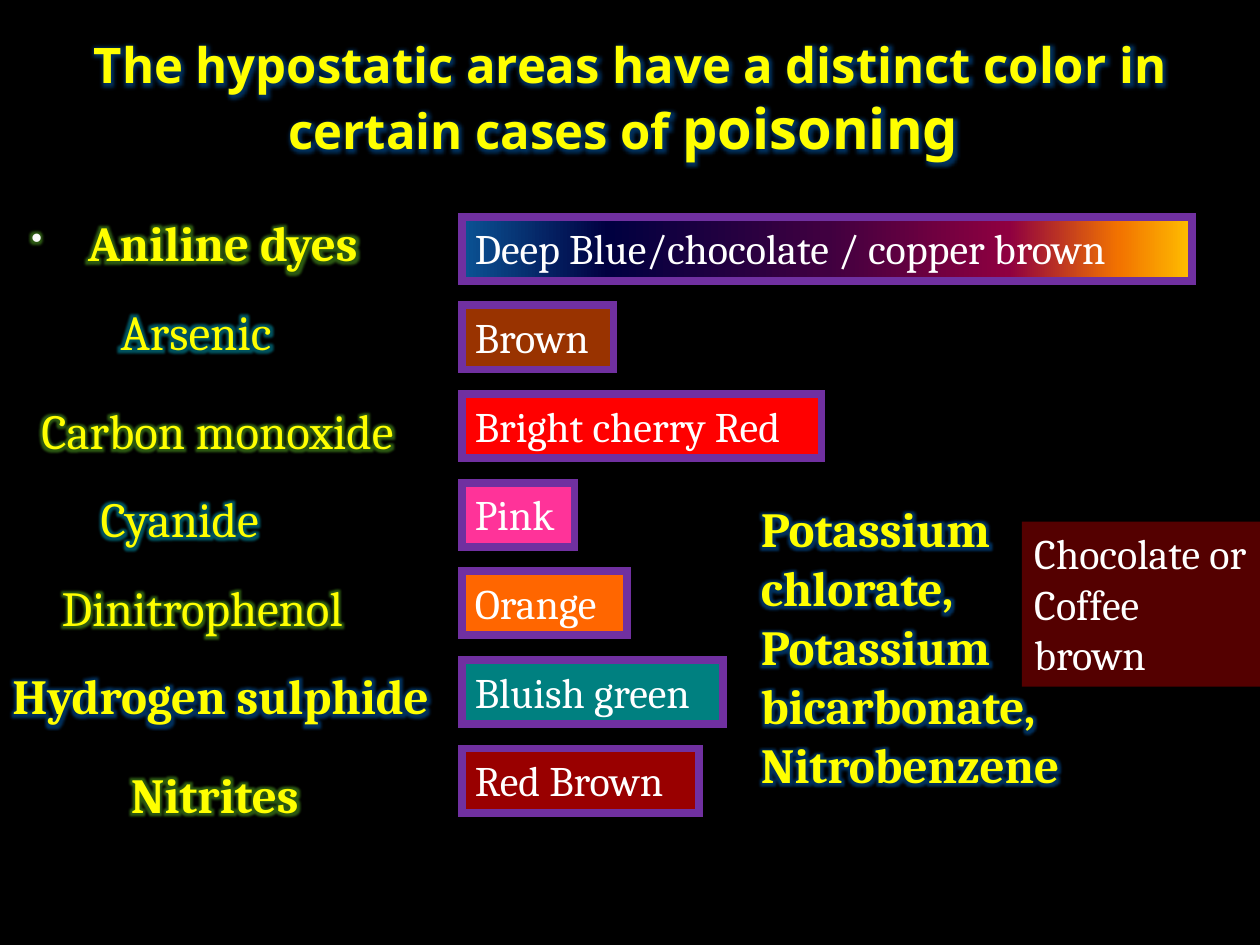
from dataclasses import dataclass

from lxml import etree
from pptx import Presentation
from pptx.dml.color import RGBColor
from pptx.enum.shapes import MSO_SHAPE
from pptx.enum.text import MSO_ANCHOR, MSO_AUTO_SIZE, PP_ALIGN
from pptx.oxml.ns import qn
from pptx.util import Emu, Inches, Pt

RECTANGLE = MSO_SHAPE.RECTANGLE
MIDDLE, TOP = MSO_ANCHOR.MIDDLE, MSO_ANCHOR.TOP
GROW = MSO_AUTO_SIZE.SHAPE_TO_FIT_TEXT
CENTER, LEFT = PP_ALIGN.CENTER, PP_ALIGN.LEFT


@dataclass(frozen=True)
class Theme:
    background: str = "000000"
    poison: str = "FFFF00"
    color_name: str = "FFFFFF"
    border: str = "7030A0"
    bullet: str = "F9F9F9"
    coffee: str = "540000"
    green_glow: str = "70E030"
    teal_glow: str = "00D0F0"
    blue_glow: str = "0078E8"
    heading_font: str = "Noto Sans"
    body_font: str = "Cambria"
    emphasis_size: int = 32
    poison_size: int = 28
    color_size: int = 24
    border_width: float = 4.5
    glow_radius: int = 8


THEME = Theme()
DYE_GRADIENT = [(0, "0B5394"), (20, "000040"), (50, "400040"),
                (75, "8F0040"), (90, "F27300"), (100, "FFBF00")]

# Rows of the color column
COLOR_LEFT, FIRST_ROW, LAST_ROW = 3.67, 1.72, 5.94
LABEL_HEIGHT, COLOR_HEIGHT = 0.57, 0.51

# poison, left, width, shift from the row, bold, glow, color name, color width, fill
ROWS = [
    ("Aniline dyes", 0, 3.11, -0.08, True, THEME.green_glow,
     "Deep Blue/chocolate / copper brown", 5.79, DYE_GRADIENT),
    ("Arsenic", 0.86, 1.53, -0.08, False, THEME.teal_glow, "Brown", 1.2, "993300"),
    ("Carbon monoxide", 0.23, 3.34, 0, False, THEME.green_glow,
     "Bright cherry Red", 2.85, "FF0000"),
    ("Cyanide", 0.7, 1.67, 0, False, THEME.teal_glow, "Pink", 0.89, "FF3399"),
    ("Dinitrophenol", 0.39, 2.67, 0, False, THEME.green_glow, "Orange", 1.31, "FF6600"),
    ("Hydrogen sulphide", 0, 3.77, 0, True, THEME.blue_glow,
     "Bluish green", 2.07, "008080"),
    ("Nitrites", 0.94, 1.58, 0.08, True, THEME.green_glow, "Red Brown", 1.88, "990000"),
]


def rgb(value):
    return RGBColor.from_string(value)


def add_child(parent, tag, **attributes):
    child = etree.SubElement(parent, qn(tag))
    for name, value in attributes.items():
        child.set(name, str(value))
    return child


def add_glow(run, color):
    """Put a glow behind the run, directly after its fill as the schema asks."""
    properties = run.font.fill._xPr
    effects = add_child(properties, "a:effectLst")
    glow = add_child(effects, "a:glow", rad=Pt(THEME.glow_radius))
    add_child(add_child(glow, "a:srgbClr", val=color), "a:alpha", val=40000)
    properties.find(qn("a:solidFill")).addnext(effects)


def add_run(paragraph, text, size, color, font, bold=False, glow=None):
    run = paragraph.add_run()
    run.text = text
    run.font.size = Pt(size)
    run.font.bold = bold
    run.font.name = font
    run.font.color.rgb = rgb(color)
    if glow:
        add_glow(run, glow)


def set_frame(shape, wrap=True, anchor=TOP, align=LEFT):
    """Lay out the text frame and return its first paragraph."""
    frame = shape.text_frame
    frame.word_wrap = wrap
    frame.auto_size = GROW
    frame.vertical_anchor = anchor
    frame.paragraphs[0].alignment = align
    return frame.paragraphs[0]


def add_title(slide, width):
    box = slide.shapes.add_textbox(0, 0, width, Inches(1.55))
    paragraph = set_frame(box, anchor=MIDDLE, align=CENTER)
    box.text_frame.auto_size = MSO_AUTO_SIZE.NONE
    for text, size in [
        ("The hypostatic areas have a distinct color in certain cases of ",
         THEME.poison_size),
        ("poisoning", THEME.emphasis_size),
        (" ", THEME.poison_size),
    ]:
        add_run(paragraph, text, size, THEME.poison, THEME.heading_font, True,
                THEME.blue_glow)


def add_poison(slide, text, left, top, width, height, bold, glow, wrap=False):
    box = slide.shapes.add_textbox(*map(Inches, (left, top, width, height)))
    paragraph = set_frame(box, wrap)
    add_run(paragraph, text, THEME.poison_size, THEME.poison, THEME.body_font, bold, glow)
    return paragraph


def add_bullet(paragraph):
    properties = paragraph._p.get_or_add_pPr()
    properties.set("marL", str(Inches(0.6)))
    properties.set("indent", str(Inches(-0.45)))
    add_child(add_child(properties, "a:buClr"), "a:srgbClr", val=THEME.bullet)
    add_child(properties, "a:buSzPct", val=65000)
    add_child(properties, "a:buChar", char="•")


def fill_gradient(shape, stops):
    """Replace the fill by a left-to-right gradient with any number of stops."""
    shape.fill.gradient()
    shape.fill.gradient_angle = 0
    stop_list = shape._element.spPr.find(qn("a:gradFill")).find(qn("a:gsLst"))
    for old_stop in list(stop_list):
        stop_list.remove(old_stop)
    for percent, color in stops:
        stop = add_child(stop_list, "a:gs", pos=percent * 1000)
        add_child(stop, "a:srgbClr", val=color)


def add_color(slide, text, left, top, width, height, fill, border=True, wrap=False):
    block = slide.shapes.add_shape(RECTANGLE, *map(Inches, (left, top, width, height)))
    block.shadow.inherit = False
    if isinstance(fill, str):
        block.fill.solid()
        block.fill.fore_color.rgb = rgb(fill)
    else:
        fill_gradient(block, fill)
    if border:
        block.line.color.rgb = rgb(THEME.border)
        block.line.width = Pt(THEME.border_width)
        add_child(block.line._get_or_add_ln(), "a:miter", lim=800000)
    else:
        block.line.fill.background()
    add_run(set_frame(block, wrap), text, THEME.color_size, THEME.color_name,
            THEME.body_font)


def add_rows(slide):
    pitch = (LAST_ROW - FIRST_ROW) / (len(ROWS) - 1)
    for index, row in enumerate(ROWS):
        poison, left, width, shift, bold, glow, color, color_width, fill = row
        top = FIRST_ROW + index * pitch
        paragraph = add_poison(slide, poison, left, top + shift, width, LABEL_HEIGHT,
                               bold, glow)
        if index == 0:
            add_bullet(paragraph)
        add_color(slide, color, COLOR_LEFT, top, color_width, COLOR_HEIGHT, fill)


def main():
    presentation = Presentation()
    presentation.slide_width = Inches(10)
    presentation.slide_height = Inches(7.5)
    slide = presentation.slides.add_slide(presentation.slide_layouts[6])
    slide.background.fill.solid()
    slide.background.fill.fore_color.rgb = rgb(THEME.background)

    add_title(slide, Emu(presentation.slide_width))
    add_rows(slide)
    add_poison(slide, "Potassium chlorate, Potassium bicarbonate, Nitrobenzene",
               5.94, 3.91, 2.72, 2.46, True, THEME.blue_glow, wrap=True)
    add_color(slide, "Chocolate or Coffee brown", 8.11, 4.14, 1.89, 1.31,
              THEME.coffee, border=False, wrap=True)
    presentation.save("out.pptx")


if __name__ == "__main__":
    main()
